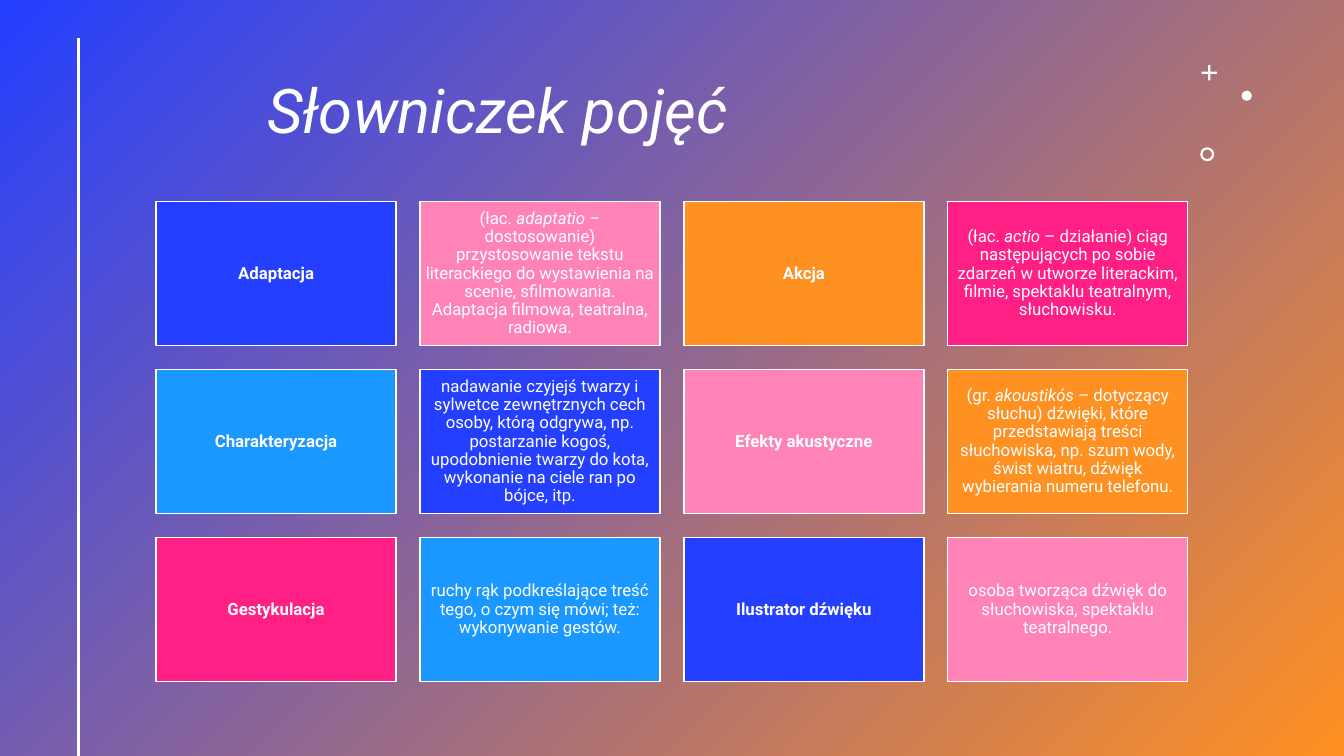
"""Build the glossary slide: a title and a grid of terms with their definitions."""
from dataclasses import dataclass

from lxml import etree
from pptx import Presentation
from pptx import util as u
from pptx.dml.color import RGBColor
from pptx.enum import shapes, text
from pptx.oxml.ns import qn


@dataclass(frozen=True)
class Theme:
    font: str = "Roboto"
    white: str = "FFFFFF"
    gradient: tuple = ("243FFF", "FF9022")
    cards: tuple = ("243FFF", "FF83B6", "FF9022", "FF1F85", "1A98FF")
    title_size: int = 44
    card_size: int = 12


THEME = Theme()
COLUMNS = 4
GLOSSARY = [
    ("Adaptacja",
     "(łac. *adaptatio* – dostosowanie) przystosowanie tekstu literackiego do wystawienia "
     "na scenie, sfilmowania. Adaptacja filmowa, teatralna, radiowa."),
    ("Akcja",
     "(łac. *actio* – działanie) ciąg następujących po sobie zdarzeń w utworze literackim, "
     "filmie, spektaklu teatralnym, słuchowisku."),
    ("Charakteryzacja",
     "nadawanie czyjejś twarzy i sylwetce zewnętrznych cech osoby, którą odgrywa, np. "
     "postarzanie kogoś, upodobnienie twarzy do kota, wykonanie na ciele ran po bójce, itp."),
    ("Efekty akustyczne",
     "(gr. *akoustikós* – dotyczący słuchu) dźwięki, które przedstawiają treści słuchowiska, "
     "np. szum wody, świst wiatru, dźwięk wybierania numeru telefonu."),
    ("Gestykulacja",
     "ruchy rąk podkreślające treść tego, o czym się mówi; też: wykonywanie gestów."),
    ("Ilustrator dźwięku",
     "osoba tworząca dźwięk do słuchowiska, spektaklu teatralnego."),
]


def color(value):
    return RGBColor.from_string(value)


def add_shape(slide, kind, left, top, width, height, fill=None):
    """Add a preset shape without shadow or outline."""
    shape = slide.shapes.add_shape(kind, u.Pt(left), u.Pt(top), u.Pt(width), u.Pt(height))
    shape.shadow.inherit = False
    shape.line.fill.background()
    if fill:
        shape.fill.solid()
        shape.fill.fore_color.rgb = color(fill)
    return shape


def write(shape, content, size, inset, align, bold=False, italic=False):
    """Write one paragraph, with the parts between asterisks in italics."""
    frame = shape.text_frame
    frame.word_wrap = True
    frame.vertical_anchor = text.MSO_ANCHOR.MIDDLE
    frame.margin_left = frame.margin_right = u.Pt(inset)
    frame.margin_top = frame.margin_bottom = u.Pt(inset)
    paragraph = frame.paragraphs[0]
    paragraph.alignment = align
    paragraph.line_spacing = 0.9
    for index, part in enumerate(content.split("*")):
        run = paragraph.add_run()
        run.text = part
        run.font.name = THEME.font
        run.font.size = u.Pt(size)
        run.font.bold = bold
        run.font.italic = italic or index % 2 == 1
        run.font.color.rgb = color(THEME.white)


def add_background(slide, width, height):
    """Cover the slide with a diagonal gradient."""
    background = add_shape(slide, shapes.MSO_SHAPE.RECTANGLE, 0, 0, width, height)
    background.fill.gradient()
    background.fill.gradient_angle = 315
    for stop, value in zip(background.fill.gradient_stops, THEME.gradient):
        stop.color.rgb = color(value)


def add_title(slide, content):
    title = slide.shapes.add_textbox(u.Pt(191), u.Pt(28.8), u.Pt(640), u.Pt(104.4))
    write(title, content, THEME.title_size, 0, text.PP_ALIGN.LEFT, italic=True)


def add_side_line(slide):
    """Draw the vertical line at the left edge."""
    line = slide.shapes.add_connector(
        shapes.MSO_CONNECTOR.STRAIGHT, u.Pt(56.2), u.Pt(27.4), u.Pt(56.2), u.Pt(540))
    line.line.color.rgb = color(THEME.white)
    line.line.width = u.Pt(2)
    etree.SubElement(line._element.spPr, qn("a:effectLst"))


def add_ornaments(slide):
    """Place the plus, the dot and the ring in the top right corner."""
    plus = add_shape(slide, shapes.MSO_SHAPE.CROSS, 858.4, 46.6, 10.8, 10.8, THEME.white)
    plus.adjustments[0] = 0.43
    add_shape(slide, shapes.MSO_SHAPE.OVAL, 887, 64.8, 7.2, 7.2, THEME.white)
    ring = add_shape(slide, shapes.MSO_SHAPE.DONUT, 857.3, 105.2, 10, 10, THEME.white)
    ring.adjustments[0] = 0.16


def add_card(slide, index, content, bold):
    """Add one grid cell, coloured by its place in the palette cycle."""
    row, column = divmod(index, COLUMNS)
    card = add_shape(slide, shapes.MSO_SHAPE.RECTANGLE, 111.5 + column * 188.5,
                     144 + row * 120, 171.5, 102.9, THEME.cards[index % len(THEME.cards)])
    card.line.color.rgb = color(THEME.white)
    card.line.width = u.Pt(1)
    write(card, content, THEME.card_size, 3.6, text.PP_ALIGN.CENTER, bold=bold)


def main():
    presentation = Presentation()
    presentation.slide_width, presentation.slide_height = u.Pt(960), u.Pt(540)
    slide = presentation.slides.add_slide(presentation.slide_layouts[6])
    add_background(slide, 960, 540)
    add_title(slide, "Słowniczek pojęć")
    add_side_line(slide)
    add_ornaments(slide)
    for index, (term, definition) in enumerate(GLOSSARY):
        add_card(slide, 2 * index, term, bold=True)
        add_card(slide, 2 * index + 1, definition, bold=False)
    presentation.save("out.pptx")


if __name__ == "__main__":
    main()
